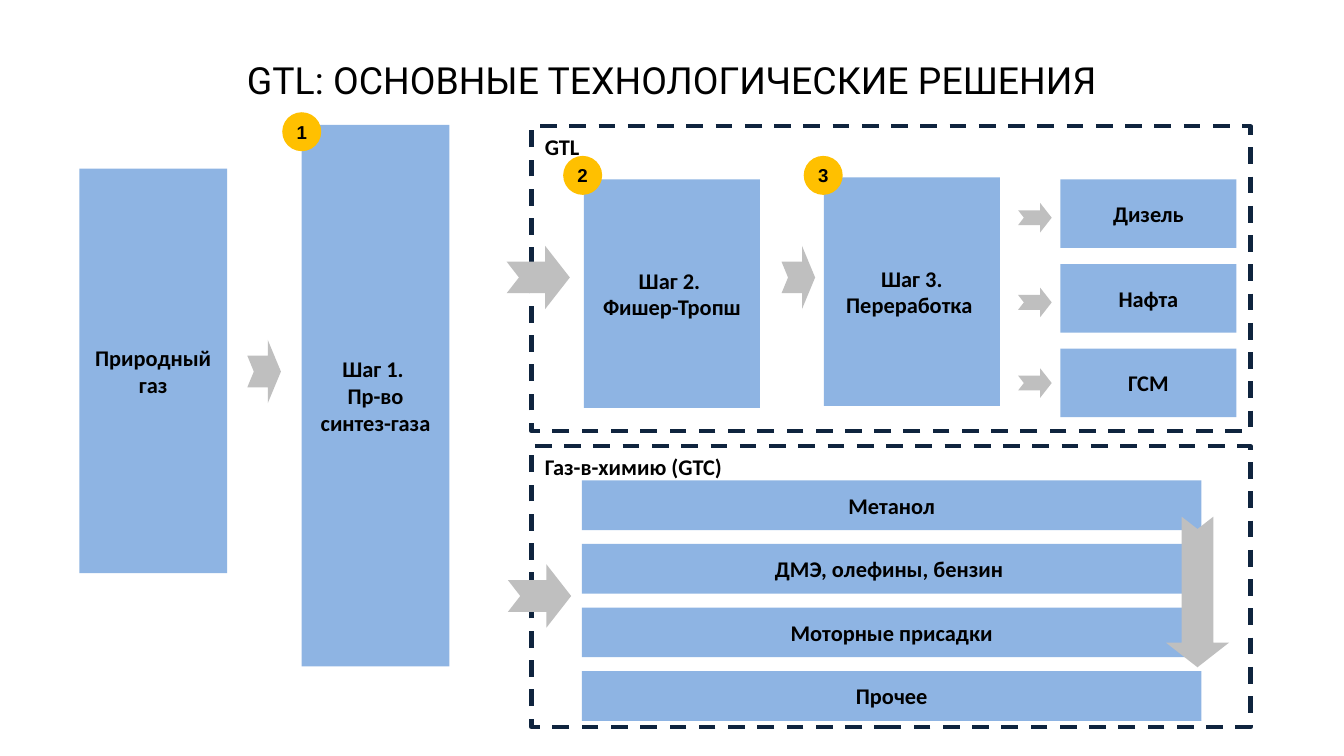
from copy import deepcopy

from pptx import Presentation
from pptx.dml.color import RGBColor
from pptx.enum.dml import MSO_LINE
from pptx.enum.shapes import MSO_SHAPE
from pptx.enum.text import MSO_ANCHOR, MSO_AUTO_SIZE, PP_ALIGN
from pptx.oxml.ns import qn
from pptx.util import Inches, Pt

COLS, ROWS = 100, 56.25
CELL = Inches(0.1)
BLUE, GOLD, GREY, NAVY, BLACK = "8EB4E3", "FFC000", "BFBFBF", "0F243E", "000000"
BODY = {"name": "Calibri", "size": Pt(12), "bold": True}
MARK = {"name": "Arial", "size": Pt(10), "bold": True}
HEAD = {"name": "Roboto", "size": Pt(20), "bold": False}
MID = {"word_wrap": True, "vertical_anchor": MSO_ANCHOR.MIDDLE}
TOP = {"word_wrap": True, "vertical_anchor": MSO_ANCHOR.TOP}
TIGHT = {"word_wrap": False, "vertical_anchor": MSO_ANCHOR.MIDDLE}
TIGHT |= {f"margin_{side}": Inches(0.05) for side in ("left", "top", "right", "bottom")}


def color(code):
    """Turn a hex string into a colour."""
    return RGBColor.from_string(code)


def grid(*cells):
    """Turn grid columns and rows into lengths."""
    return [round(cell * CELL) for cell in cells]


def apply(item, form):
    """Set each format value on an item."""
    for key, value in form.items():
        setattr(item, key, value)


def write(shape, text, font, frame, align=PP_ALIGN.CENTER):
    """Fill a shape with one formatted paragraph."""
    body = shape.text_frame
    apply(body, frame)
    para = body.paragraphs[0]
    para.text = text
    para.alignment = align
    for run in para.runs:
        apply(run.font, font)
        run.font.color.rgb = color(BLACK)
    for gap in para._p.findall(qn("a:br")):
        gap.insert(0, deepcopy(para.runs[0]._r.rPr))


def draw(slide, kind, area, fill=None):
    """Add a flat shape without a line."""
    shape = slide.shapes.add_shape(kind, *grid(*area))
    shape.shadow.inherit = False
    shape.line.fill.background()
    if fill:
        shape.fill.solid()
        shape.fill.fore_color.rgb = color(fill)
    else:
        shape.fill.background()
    return shape


def title(slide, text):
    """Place the slide title."""
    shape = slide.shapes.title
    places = grid(0, 2.1, COLS, 7.7)
    apply(shape, dict(zip(("left", "top", "width", "height"), places)))
    write(shape, text, HEAD, MID | {"auto_size": MSO_AUTO_SIZE.NONE})


def frame(slide, text, *area):
    """Add a dashed group frame with its label."""
    shape = draw(slide, MSO_SHAPE.RECTANGLE, area)
    shape.line.color.rgb = color(NAVY)
    apply(shape.line, {"width": Pt(2.25), "dash_style": MSO_LINE.DASH})
    write(shape, text, BODY, TOP, PP_ALIGN.LEFT)


def box(slide, text, *area):
    """Add a blue box with centred text."""
    write(draw(slide, MSO_SHAPE.RECTANGLE, area, BLUE), text, BODY, MID)


def badge(slide, text, left, top):
    """Add a round step number."""
    shape = draw(slide, MSO_SHAPE.OVAL, (left, top, 2.9, 2.9), GOLD)
    write(shape, text, MARK, TIGHT)


def arrow(slide, *area, turn=0):
    """Add a grey notched arrow."""
    shape = draw(slide, MSO_SHAPE.NOTCHED_RIGHT_ARROW, area, GREY)
    shape.adjustments[0], shape.adjustments[1] = 0.5, 0.39
    shape.rotation = turn


def main():
    """Build the slide and save it."""
    deck = Presentation()
    deck.slide_width, deck.slide_height = grid(COLS, ROWS)
    slide = deck.slides.add_slide(deck.slide_layouts[5])
    frame(slide, "GTL", 39.55, 9.4, 53.5, 22.7)
    title(slide, "GTL: ОСНОВНЫЕ ТЕХНОЛОГИЧЕСКИЕ РЕШЕНИЯ")
    frame(slide, "Газ-в-химию (GTC)", 39.55, 33.2, 53.5, 20.9)

    box(slide, "Природный газ", 5.9, 12.55, 11, 30.1)
    box(slide, "Шаг 1. \vПр-во синтез-газа", 22.45, 9.3, 11, 40.3)
    box(slide, "Шаг 2. \vФишер-Тропш", 43.45, 13.35, 13.1, 17)
    box(slide, "Шаг 3. Переработка ", 61.3, 13.2, 13.1, 17)
    for row, text in enumerate(("Дизель", "Нафта", "ГСМ")):
        box(slide, text, 78.9, 13.35 + 6.3 * row, 13.1, 5.1)
    goods = "Метанол", "ДМЭ, олефины, бензин ", "Моторные присадки", "Прочее"
    for row, text in enumerate(goods):
        box(slide, text, 43.3, 35.75 + 4.73 * row, 46.1, 3.7)

    for step, spot in enumerate(((21, 8.35), (41.9, 11.6), (59.8, 11.6)), 1):
        badge(slide, str(step), *spot)
    for left, top, width in (
        (18.4, 25.3, 2.5), (37.7, 18.3, 4.7), (37.8, 42, 4.7), (58.15, 18.3, 2.5)
    ):
        arrow(slide, left, top, width, 4.7)
    for top in (15.1, 21.4, 27.4):
        arrow(slide, 75.75, top, 2.5, 2.2)
    arrow(slide, 83.5, 41.7, 11.2, 4.7, turn=90)
    deck.save("out.pptx")


if __name__ == "__main__":
    main()
